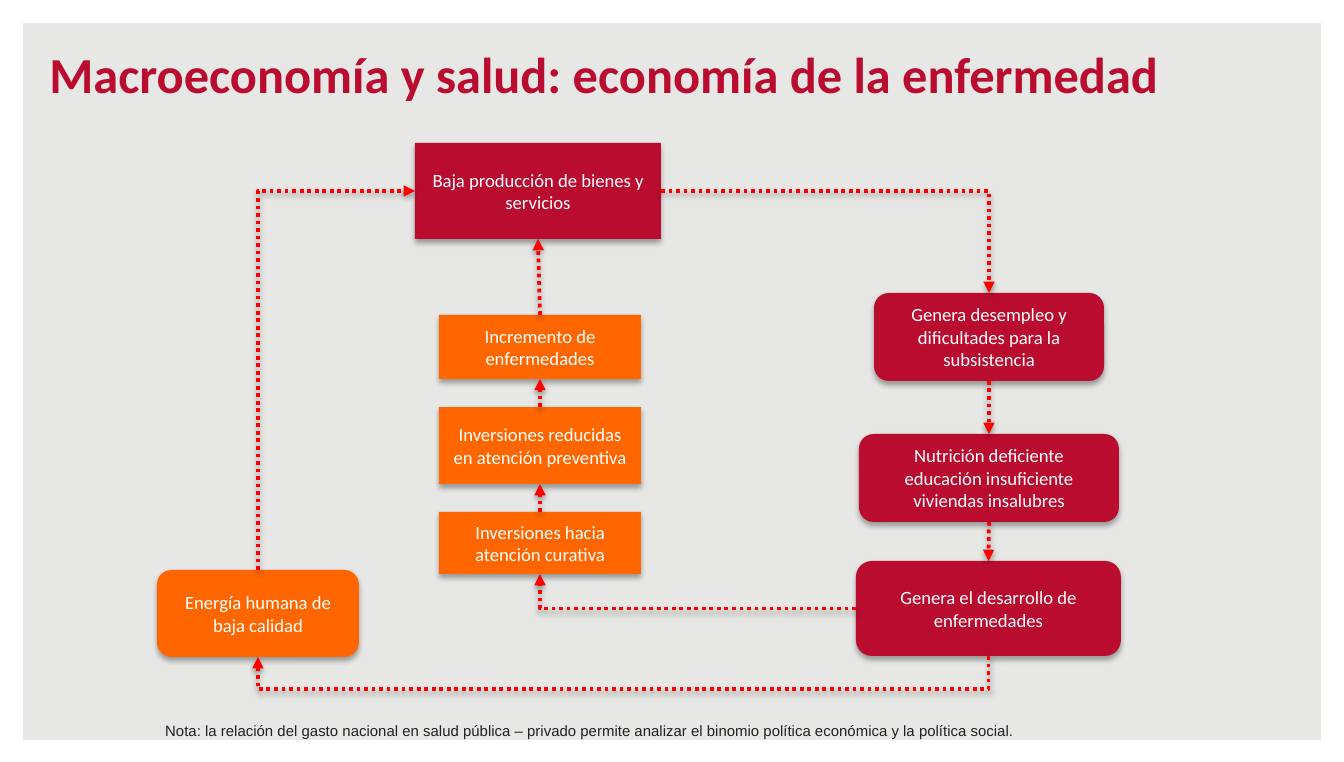
from dataclasses import dataclass

from lxml import etree
from pptx import Presentation
from pptx.dml.color import RGBColor
from pptx.enum.dml import MSO_LINE
from pptx.enum.shapes import MSO_CONNECTOR, MSO_SHAPE
from pptx.enum.text import MSO_ANCHOR, PP_ALIGN
from pptx.oxml import parse_xml
from pptx.oxml.ns import qn
from pptx.util import Pt

PX = 914400 / 134.4
NS = "http://schemas.openxmlformats.org/drawingml/2006/main"
RECT, ROUND, FRAME = MSO_SHAPE.RECTANGLE, MSO_SHAPE.ROUNDED_RECTANGLE, MSO_SHAPE.FRAME
STRAIGHT, ELBOW = MSO_CONNECTOR.STRAIGHT, MSO_CONNECTOR.ELBOW
SYS_DOT = MSO_LINE.ROUND_DOT
LEFT_ALIGN, CENTER = PP_ALIGN.LEFT, PP_ALIGN.CENTER
MIDDLE, BOTTOM, TOP = MSO_ANCHOR.MIDDLE, MSO_ANCHOR.BOTTOM, MSO_ANCHOR.TOP
CRIMSON, ORANGE, RED, WHITE = "BA0C2F", "FF6600", "FF0000", "FFFFFF"


@dataclass
class Box:
    key: str
    text: str
    x: int
    y: int
    w: int
    h: int
    kind: int
    color: str


@dataclass
class Link:
    start: str
    start_site: int
    end: str
    end_site: int
    bend: str = ""
    rot: int = 0
    drop: int = 0


BOXES = [
    Box("produccion", "Baja producción de bienes y servicios", 415, 143, 246, 96, RECT, CRIMSON),
    Box("desempleo", "Genera desempleo y dificultades para la subsistencia",
        874, 293, 230, 88, ROUND, CRIMSON),
    Box("nutricion", "Nutrición deficiente educación insuficiente viviendas insalubres",
        859, 434, 260, 88, ROUND, CRIMSON),
    Box("desarrollo", "Genera el desarrollo de enfermedades", 856, 561, 265, 95, ROUND, CRIMSON),
    Box("curativa", "Inversiones hacia atención curativa", 439, 512, 202, 62, RECT, ORANGE),
    Box("preventiva", "Inversiones reducidas en atención preventiva",
        439, 407, 202, 77, RECT, ORANGE),
    Box("incremento", "Incremento de enfermedades", 439, 315, 202, 64, RECT, ORANGE),
    Box("energia", "Energía humana de baja calidad", 157, 570, 202, 87, ROUND, ORANGE),
]

LINKS = [
    Link("produccion", 3, "desempleo", 0, "bentConnector2"),
    Link("desempleo", 2, "nutricion", 0),
    Link("nutricion", 2, "desarrollo", 0),
    Link("desarrollo", 1, "curativa", 2, "bentConnector2", 180),
    Link("curativa", 0, "preventiva", 2),
    Link("preventiva", 0, "incremento", 2),
    Link("incremento", 0, "produccion", 2),
    Link("desarrollo", 2, "energia", 2, "bentConnector3", 90, 33),
    Link("energia", 0, "produccion", 1, "bentConnector2", 270),
]


def px(n: float) -> int:
    return round(n * PX)


def rgb(color: str) -> RGBColor:
    return RGBColor.from_string(color)


def place(sp, x: int, y: int, w: int, h: int) -> None:
    for name, n in {"left": x, "top": y, "width": w, "height": h}.items():
        setattr(sp, name, px(n))


def write(sp, text: str, color: str, align, anchor, **fmt) -> None:
    tf = sp.text_frame
    tf.word_wrap = True
    tf.vertical_anchor = anchor
    p = tf.paragraphs[0]
    p.alignment = align
    r = p.add_run()
    r.text = text
    for name, value in fmt.items():
        setattr(r.font, name, value)
    r.font.color.rgb = rgb(color)


def add_shadow(sp, dist: int, alpha: int) -> None:
    sp._element.spPr.append(parse_xml(
        f'<a:effectLst xmlns:a="{NS}"><a:outerShdw blurRad="40000" dist="{dist}" '
        f'dir="5400000" rotWithShape="0"><a:srgbClr val="000000">'
        f'<a:alpha val="{alpha * 1000}"/></a:srgbClr></a:outerShdw></a:effectLst>'))


def draw_box(s, b: Box):
    sp = s.shapes.add_shape(b.kind, px(b.x), px(b.y), px(b.w), px(b.h))
    sp.fill.solid()
    sp.fill.fore_color.rgb = rgb(b.color)
    sp.line.fill.background()
    add_shadow(sp, 23000, 35)
    write(sp, b.text, WHITE, CENTER, MIDDLE, size=Pt(10), name="Calibri")
    return sp


def bend(c, link: Link) -> None:
    x1, y1, x2, y2 = c.begin_x, c.begin_y, c.end_x, c.end_y
    w, h = abs(x2 - x1), abs(y2 - y1)
    if link.rot % 180:
        w, h = h, w
    xfrm = c._element.spPr.find(qn("a:xfrm"))
    xfrm.attrib.clear()
    xfrm.set("rot", str(link.rot * 60000))
    c.left, c.top = (x1 + x2 - w) // 2, (y1 + y2 - h) // 2
    c.width, c.height = w, h
    geom = c._element.spPr.find(qn("a:prstGeom"))
    geom.set("prst", link.bend)
    if link.drop:
        adj = round(px(link.drop) / w * 100000)
        etree.SubElement(geom.find(qn("a:avLst")), qn("a:gd"), name="adj1", fmla=f"val {adj}")


def draw_link(s, link: Link, shapes: dict) -> None:
    c = s.shapes.add_connector(ELBOW if link.bend else STRAIGHT, 0, 0, 0, 0)
    c.begin_connect(shapes[link.start], link.start_site)
    c.end_connect(shapes[link.end], link.end_site)
    if link.bend:
        bend(c, link)
    c.line.color.rgb = rgb(RED)
    c.line.width = Pt(2)
    c.line.dash_style = SYS_DOT
    etree.SubElement(c.line._get_or_add_ln(), qn("a:tailEnd"), type="triangle")
    add_shadow(c, 20000, 38)


def main() -> None:
    prs = Presentation()
    prs.slide_width, prs.slide_height = px(1344), px(762)
    s = prs.slides.add_slide(prs.slide_layouts[5])
    s.background.fill.solid()
    s.background.fill.fore_color.rgb = rgb("E7E7E5")

    frame = s.shapes.add_shape(FRAME, 0, 0, px(1344), px(763))
    frame.adjustments[0] = 0.03
    frame.fill.solid()
    frame.fill.fore_color.rgb = rgb(WHITE)
    frame.line.fill.background()
    frame.shadow.inherit = False

    title = s.shapes.title
    place(title, 36, 28, 1282, 82)
    write(title, "Macroeconomía y salud: economía de la enfermedad", CRIMSON,
          LEFT_ALIGN, BOTTOM, size=Pt(27), name="Calibri", bold=True)

    shapes = {b.key: draw_box(s, b) for b in BOXES}
    for link in LINKS:
        draw_link(s, link, shapes)

    note = s.shapes.add_textbox(px(152), px(715), px(1148), px(32))
    write(note, "Nota: la relación del gasto nacional en salud pública – privado permite "
          "analizar el binomio política económica y la política social.", "202124",
          LEFT_ALIGN, TOP, size=Pt(8), name="Arial")
    prs.save("out.pptx")


if __name__ == "__main__":
    main()
